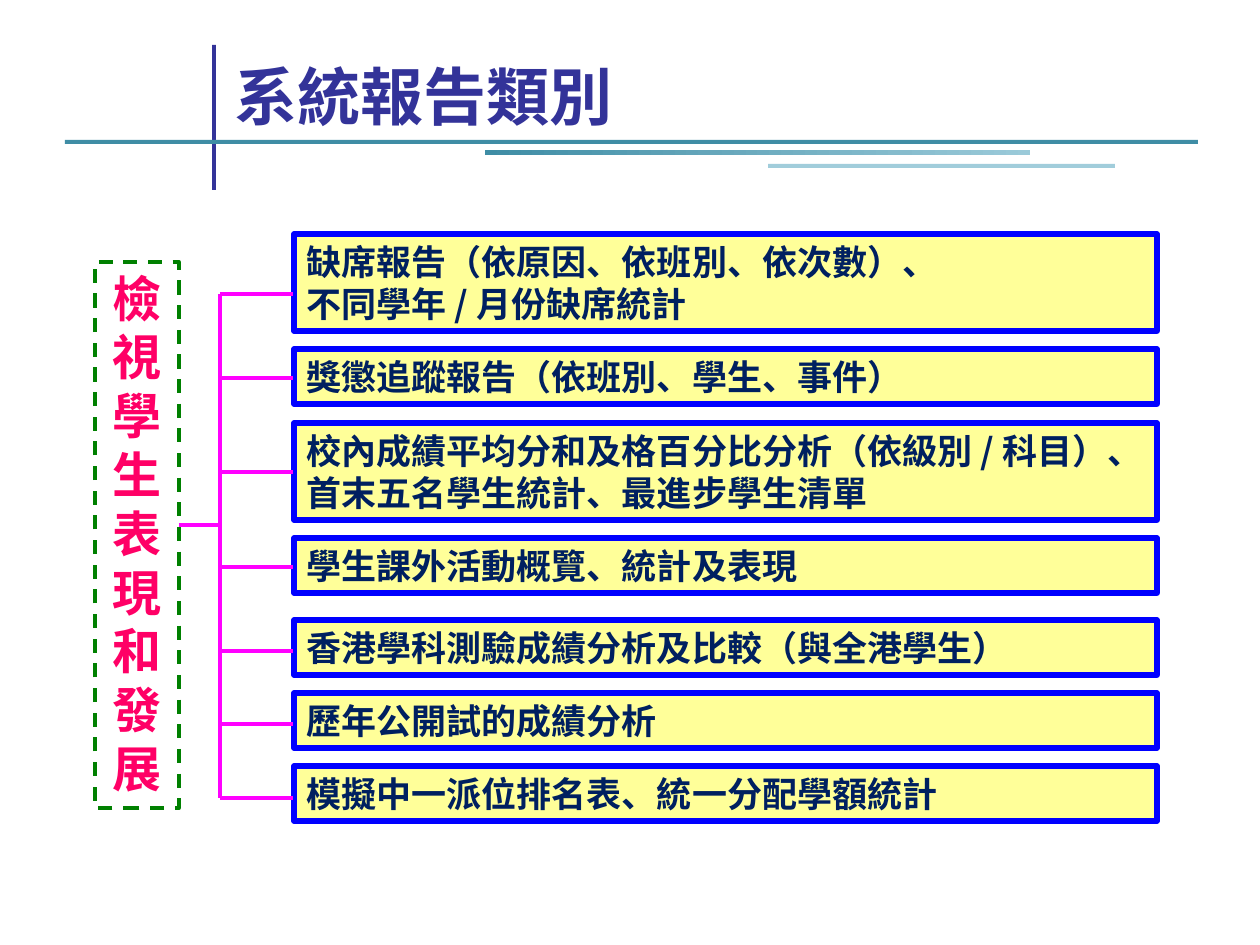
from lxml import etree
from pptx import Presentation
from pptx.dml.color import RGBColor
from pptx.enum.dml import MSO_LINE
from pptx.enum.shapes import MSO_CONNECTOR as CONN, MSO_SHAPE as SHAPE
from pptx.enum.text import MSO_ANCHOR as ANCHOR, PP_ALIGN as ALIGN
from pptx.oxml.ns import qn
from pptx.util import Emu, Pt

PX = 914400 / 126
FONT = "Noto Sans CJK SC"
INDIGO = RGBColor(0x33, 0x33, 0x99)
TEAL = RGBColor(0x3F, 0x8D, 0xA5)
SKY = RGBColor(0x9B, 0xCA, 0xD9)
PALE = RGBColor(0xA1, 0xCD, 0xDB)
YELLOW = RGBColor(0xFF, 0xFF, 0x99)
BLUE = RGBColor(0x00, 0x00, 0xFF)
NAVY = RGBColor(0x00, 0x20, 0x60)
MAGENTA = RGBColor(0xFF, 0x00, 0xFF)
GREEN = RGBColor(0x00, 0x80, 0x00)
PINK = RGBColor(0xFF, 0x00, 0x66)

REPORTS = [
    (234, 97, 294, "缺席報告（依原因、依班別、依次數）、\n不同學年 / 月份缺席統計"),
    (349, 55, 378, "獎懲追蹤報告（依班別、學生、事件）"),
    (423, 97, 472, "校內成績平均分和及格百分比分析（依級別 / 科目）、首末五名學生統計、最進步學生清單"),
    (538, 55, 567, "學生課外活動概覽、統計及表現"),
    (620, 55, 651, "香港學科測驗成績分析及比較（與全港學生）"),
    (693, 55, 724, "歷年公開試的成績分析"),
    (766, 55, 798, "模擬中一派位排名表、統一分配學額統計"),
]


def px(*values):
    return [Emu(round(v * PX)) for v in values]


class Deck:
    def __init__(self, prs):
        self.s = prs.slides.add_slide(prs.slide_layouts[6])

    def bar(self, x, y, w, h, color, end=None):
        sp = self.s.shapes.add_shape(SHAPE.RECTANGLE, *px(x, y, w, h))
        sp.shadow.inherit = False
        sp.line.fill.background()
        if end is None:
            sp.fill.solid()
            sp.fill.fore_color.rgb = color
        else:
            sp.fill.gradient()
            sp.fill.gradient_angle = 0
            for stop, c in zip(sp.fill.gradient_stops, (color, end)):
                stop.color.rgb = c

    def label(self, sp, text, size, color, align=ALIGN.LEFT, anchor=ANCHOR.TOP):
        tf = sp.text_frame
        tf.word_wrap = True
        tf.vertical_anchor = anchor
        tf.text = text
        for p in tf.paragraphs:
            p.alignment = align
            p.line_spacing = Pt(round(size * 1.2, 1))
            for r in p.runs:
                r.font.name = FONT
                r.font.size = Pt(size)
                r.font.bold = True
                r.font.color.rgb = color
                ea = etree.SubElement(r.font._element, qn("a:ea"))
                ea.set("typeface", FONT)

    def box(self, x, y, w, h, text, size, color, border, weight,
            fill=None, dash=None, align=ALIGN.LEFT):
        sp = self.s.shapes.add_shape(SHAPE.RECTANGLE, *px(x, y, w, h))
        sp.shadow.inherit = False
        if fill is None:
            sp.fill.background()
        else:
            sp.fill.solid()
            sp.fill.fore_color.rgb = fill
        sp.line.color.rgb = border
        sp.line.width = Pt(weight)
        if dash is not None:
            sp.line.dash_style = dash
        self.label(sp, text, size, color, align)

    def title(self, x, y, w, h, text):
        sp = self.s.shapes.add_textbox(*px(x, y, w, h))
        self.label(sp, text, 36, INDIGO, anchor=ANCHOR.BOTTOM)

    def line(self, x1, y1, x2, y2):
        c = self.s.shapes.add_connector(CONN.STRAIGHT, *px(x1, y1, x2, y2))
        c.line.color.rgb = MAGENTA
        c.line.width = Pt(2)
        etree.SubElement(c._element.spPr, qn("a:effectLst"))


def main():
    prs = Presentation()
    prs.slide_width, prs.slide_height = px(1260, 945)
    deck = Deck(prs)

    deck.bar(212, 45, 4, 145, INDIGO)
    deck.bar(65, 140, 1133, 4, TEAL)
    deck.bar(485, 150, 545, 5, TEAL, SKY)
    deck.bar(768, 164, 347, 4, PALE)
    deck.title(222, 34, 966, 105, "系統報告類別")

    deck.box(95, 262, 84, 546, "檢視學生表現和發展", 28, PINK, GREEN, 2,
             dash=MSO_LINE.DASH, align=ALIGN.CENTER)
    for top, height, branch, text in REPORTS:
        deck.box(294, top, 863, height, text, 20, NAVY, BLUE, 3, fill=YELLOW)
        deck.line(220, branch, 293, branch)
    deck.line(220, REPORTS[0][2], 220, REPORTS[-1][2])
    deck.line(179, 525, 220, 525)

    prs.save("out.pptx")


if __name__ == "__main__":
    main()
